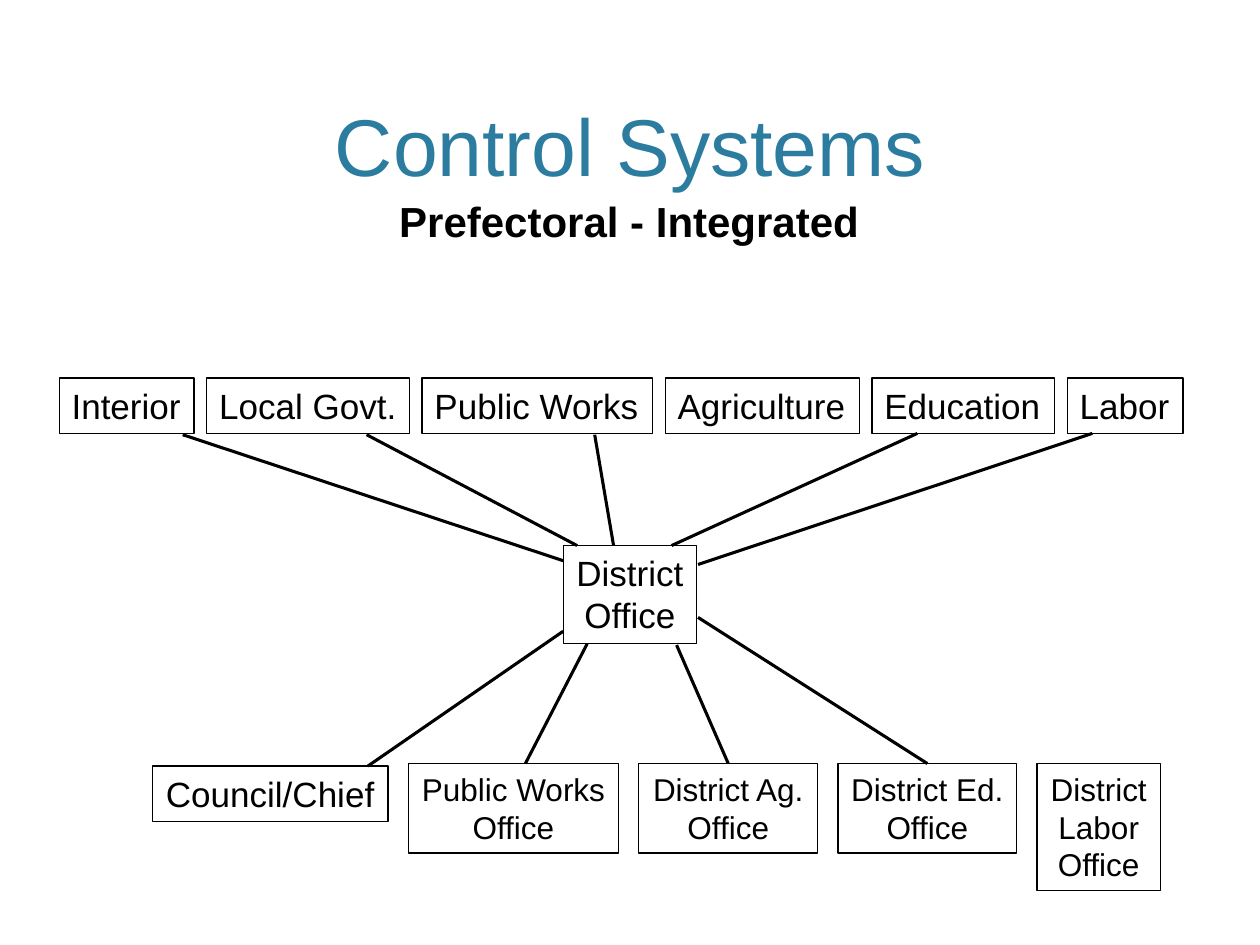
from dataclasses import dataclass

from lxml.etree import SubElement
from pptx import Presentation
from pptx.dml.color import RGBColor
from pptx.enum.shapes import MSO_CONNECTOR, MSO_SHAPE
from pptx.enum.text import MSO_ANCHOR, MSO_AUTO_SIZE, PP_ALIGN
from pptx.oxml.ns import qn
from pptx.util import Pt

PX = 9144  # 100 px to the inch


@dataclass(frozen=True)
class Theme:
    font: str = "Arial"
    ink: RGBColor = RGBColor(0x00, 0x00, 0x00)
    accent: RGBColor = RGBColor(0x2C, 0x7C, 0x9F)
    title: int = 46
    subtitle: int = 24
    unit: int = 20
    branch: int = 18
    border: float = 0.75
    link: float = 1.75


theme = Theme()


def write(frame, text, size, color=theme.ink, align=PP_ALIGN.CENTER, bold=False):
    """Fill a text frame, one paragraph for each line of text."""
    frame.text = text
    for paragraph in frame.paragraphs:
        paragraph.alignment = align
        paragraph.font.name = theme.font
        paragraph.font.size = Pt(size)
        paragraph.font.bold = bold
        paragraph.font.color.rgb = color


def add_office(left, top, width, height, text, size, align=PP_ALIGN.CENTER):
    office = slide.shapes.add_shape(
        MSO_SHAPE.RECTANGLE, left * PX, top * PX, width * PX, height * PX)
    office.shadow.inherit = False
    office.fill.background()
    office.line.color.rgb = theme.ink
    office.line.width = Pt(theme.border)
    frame = office.text_frame
    frame.word_wrap = False
    frame.auto_size = MSO_AUTO_SIZE.SHAPE_TO_FIT_TEXT
    frame.vertical_anchor = MSO_ANCHOR.TOP
    write(frame, text, size, align=align)
    return office


presentation = Presentation()
presentation.slide_width = 1000 * PX
presentation.slide_height = 750 * PX
slide = presentation.slides.add_slide(presentation.slide_layouts[6])

# Headings
title = slide.shapes.add_textbox(60 * PX, 12 * PX, 880 * PX, 146 * PX).text_frame
title.word_wrap = True
title.vertical_anchor = MSO_ANCHOR.BOTTOM
write(title, "Control Systems", theme.title, theme.accent)

subtitle = slide.shapes.add_textbox(307 * PX, 150 * PX, 385 * PX, 50 * PX).text_frame
subtitle.word_wrap = False
subtitle.auto_size = MSO_AUTO_SIZE.SHAPE_TO_FIT_TEXT
write(subtitle, "Prefectoral - Integrated", theme.subtitle,
      align=PP_ALIGN.LEFT, bold=True)

# Ministries along the top
ministries = [("Interior", 107), ("Local Govt.", 161), ("Public Works", 183),
              ("Agriculture", 154), ("Education", 145), ("Labor", 92)]
left, ministry_gap = 47, 10
for name, width in ministries:
    add_office(left, 300, width, 44, name, theme.unit, PP_ALIGN.LEFT)
    left += width + ministry_gap

add_office(447, 433, 106, 78, "District\nOffice", theme.unit)

# Local offices along the bottom
local_offices = [
    ("Council/Chief", 608, 187, 44, theme.unit),
    ("Public Works\nOffice", 606, 167, 71, theme.branch),
    ("District Ag.\nOffice", 606, 142, 71, theme.branch),
    ("District Ed.\nOffice", 606, 142, 71, theme.branch),
    ("District\nLabor\nOffice", 606, 98, 101, theme.branch),
]
left, local_gap = 121, 16
local_boxes = {}
for name, top, width, height, size in local_offices:
    local_boxes[name] = add_office(left, top, width, height, name, size)
    left += width + local_gap

# Links to the district office: outer end, inner end, office joined at its top
links = [
    (145, 345, 447, 445, None),
    (291, 345, 458, 433, None),
    (472, 345, 487, 433, None),
    (728, 344, 533, 433, None),
    (867, 344, 554, 448, None),
    (292, 608, 447, 501, None),
    (417, 606, 466, 511, None),
    (579, 606, 537, 512, "District Ag.\nOffice"),
    (734, 606, 554, 490, "District Ed.\nOffice"),
]
for x1, y1, x2, y2, joined in links:
    link = slide.shapes.add_connector(
        MSO_CONNECTOR.STRAIGHT, x1 * PX, y1 * PX, x2 * PX, y2 * PX)
    link.line.color.rgb = theme.ink
    link.line.width = Pt(theme.link)
    SubElement(link._element.spPr, qn("a:effectLst"))
    if joined:
        link.begin_connect(local_boxes[joined], 0)

presentation.save("out.pptx")
